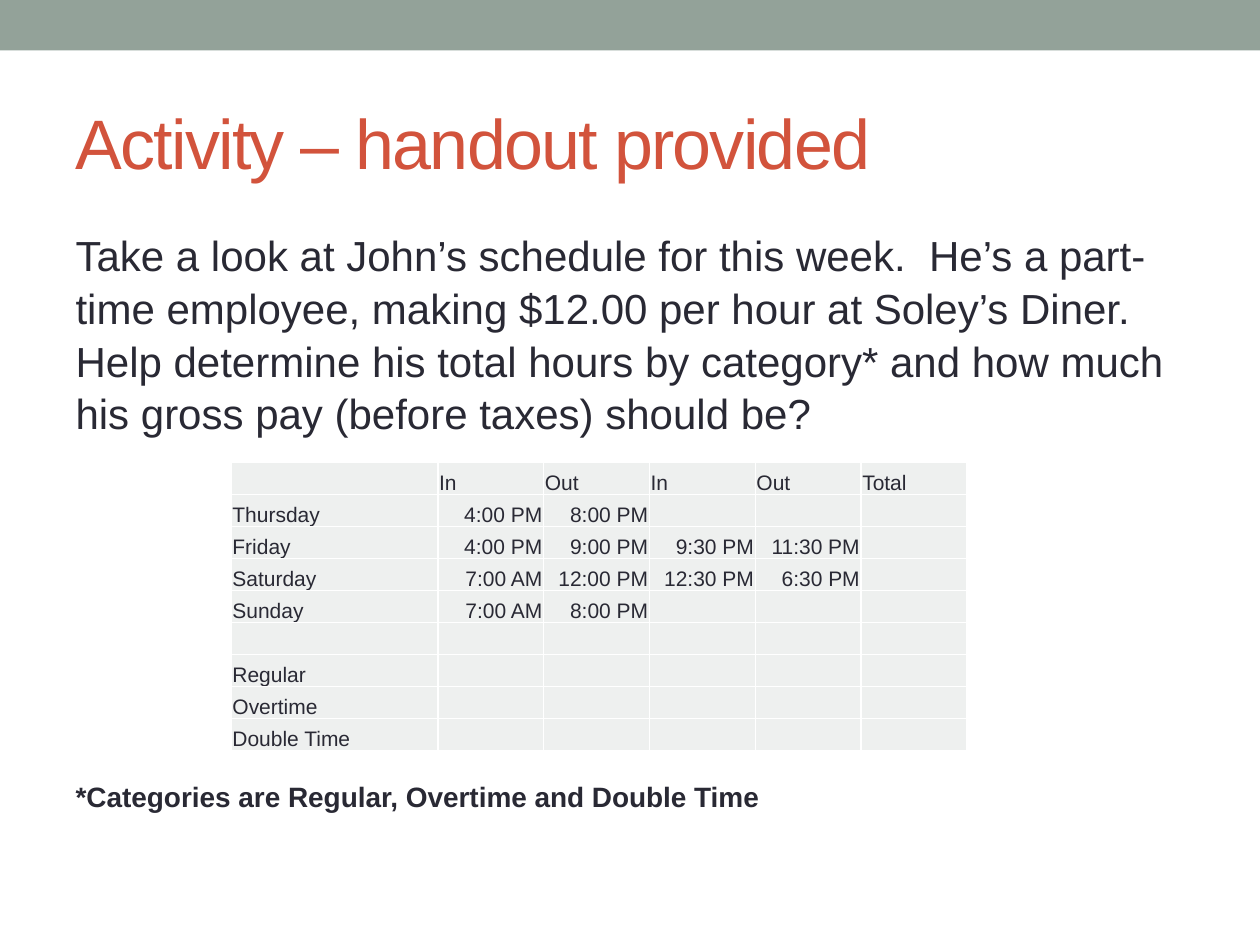
import pptx
import pptx.dml.color
import pptx.enum.shapes
import pptx.enum.text
import pptx.oxml
import pptx.util

THEME = {
    "font": "Arial",
    "band": pptx.dml.color.RGBColor.from_string("93A299"),
    "title": pptx.dml.color.RGBColor.from_string("D2533C"),
    "text": pptx.dml.color.RGBColor.from_string("292934"),
    "cell": pptx.dml.color.RGBColor.from_string("EEF0EF"),
    "border": "FFFFFF",
    "title_size": pptx.util.Pt(40),
    "body_size": pptx.util.Pt(24),
    "note_size": pptx.util.Pt(16),
    "cell_size": pptx.util.Pt(12),
}
NAMESPACE = 'xmlns:a="http://schemas.openxmlformats.org/drawingml/2006/main"'

deck = pptx.Presentation()
deck.slide_width = pptx.util.Inches(10)
deck.slide_height = pptx.util.Inches(7.5)
column = deck.slide_width / 100
row = deck.slide_height / 100
page = deck.slides.add_slide(deck.slide_layouts[1])


def place(box, left, top, width, height):
    box.left, box.width = round(left * column), round(width * column)
    box.top, box.height = round(top * row), round(height * row)


def style(para, size, color, bold=False):
    for span in para.runs:
        span.font.name = THEME["font"]
        span.font.size = size
        span.font.bold = bold
        span.font.color.rgb = color


band = page.shapes.add_shape(
    pptx.enum.shapes.MSO_SHAPE.RECTANGLE, 0, 0, deck.slide_width, round(5.33 * row)
)
band.shadow.inherit = False
band.fill.solid()
band.fill.fore_color.rgb = THEME["band"]
band.line.fill.background()

title = page.shapes.title
place(title, 5, 7.73, 90, 14.4)
title.text_frame.text = "Activity – handout provided"
title.text_frame.auto_size = pptx.enum.text.MSO_AUTO_SIZE.NONE
title.text_frame.vertical_anchor = pptx.enum.text.MSO_ANCHOR.MIDDLE
heading = title.text_frame.paragraphs[0]
heading.alignment = pptx.enum.text.PP_ALIGN.LEFT
style(heading, THEME["title_size"], THEME["title"])
heading.runs[0].font._element.set("spc", "-100")

body = page.placeholders[1]
place(body, 5, 23.33, 90, 71.07)
body.text_frame.auto_size = pptx.enum.text.MSO_AUTO_SIZE.NONE
body.text_frame.text = (
    "Take a look at John’s schedule for this week.  He’s a part-time employee, "
    "making $12.00 per hour at Soley’s Diner.  Help determine his total hours by "
    "category* and how much his gross pay (before taxes) should be?"
)
task = body.text_frame.paragraphs[0]
note = body.text_frame.add_paragraph()
note.text = "*Categories are Regular, Overtime and Double Time"
for para, size, space, bold in (
    (task, THEME["body_size"], 0, False),
    (note, THEME["note_size"], 194, True),
):
    para.line_spacing = 1.05
    para.space_before = pptx.util.Pt(space)
    style(para, size, THEME["text"], bold)
    properties = para._p.get_or_add_pPr()
    properties.set("marL", "0")
    properties.set("indent", "0")
    properties.append(pptx.oxml.parse_xml(f"<a:buNone {NAMESPACE}/>"))

schedule = [
    ["", "In", "Out", "In", "Out", "Total"],
    ["Thursday", "4:00 PM", "8:00 PM", "", "", ""],
    ["Friday", "4:00 PM", "9:00 PM", "9:30 PM", "11:30 PM", ""],
    ["Saturday", "7:00 AM", "12:00 PM", "12:30 PM", "6:30 PM", ""],
    ["Sunday", "7:00 AM", "8:00 PM", "", "", ""],
    [""] * 6,
    ["Regular"] + [""] * 5,
    ["Overtime"] + [""] * 5,
    ["Double Time"] + [""] * 5,
]
column_shares = [16.4] + [8.4] * 5
row_share = 3.39
table = page.shapes.add_table(
    len(schedule),
    len(column_shares),
    round(18.35 * column),
    round(48.95 * row),
    round(sum(column_shares) * column),
    round(len(schedule) * row_share * row),
).table
table.first_row = False
table.horz_banding = False
for table_column, share in zip(table.columns, column_shares):
    table_column.width = round(share * column)

for row_index, labels in enumerate(schedule):
    table.rows[row_index].height = round(row_share * row)
    for column_index, label in enumerate(labels):
        cell = table.cell(row_index, column_index)
        cell.margin_left = cell.margin_right = cell.margin_top = pptx.util.Inches(0.01)
        cell.margin_bottom = 0
        cell.vertical_anchor = pptx.enum.text.MSO_ANCHOR.BOTTOM
        para = cell.text_frame.paragraphs[0]
        if label:
            para.text = label
            style(para, THEME["cell_size"], THEME["text"])
        else:
            para._p.get_or_add_endParaRPr().set("sz", str(THEME["cell_size"].centipoints))
        if row_index and column_index:
            para.alignment = pptx.enum.text.PP_ALIGN.RIGHT
        cell_properties = cell._tc.get_or_add_tcPr()
        for side in ("lnL", "lnR", "lnT", "lnB"):
            cell_properties.append(pptx.oxml.parse_xml(
                f'<a:{side} {NAMESPACE} w="12700"><a:solidFill>'
                f'<a:srgbClr val="{THEME["border"]}"/></a:solidFill></a:{side}>'
            ))
        cell.fill.solid()
        cell.fill.fore_color.rgb = THEME["cell"]

deck.save("out.pptx")
